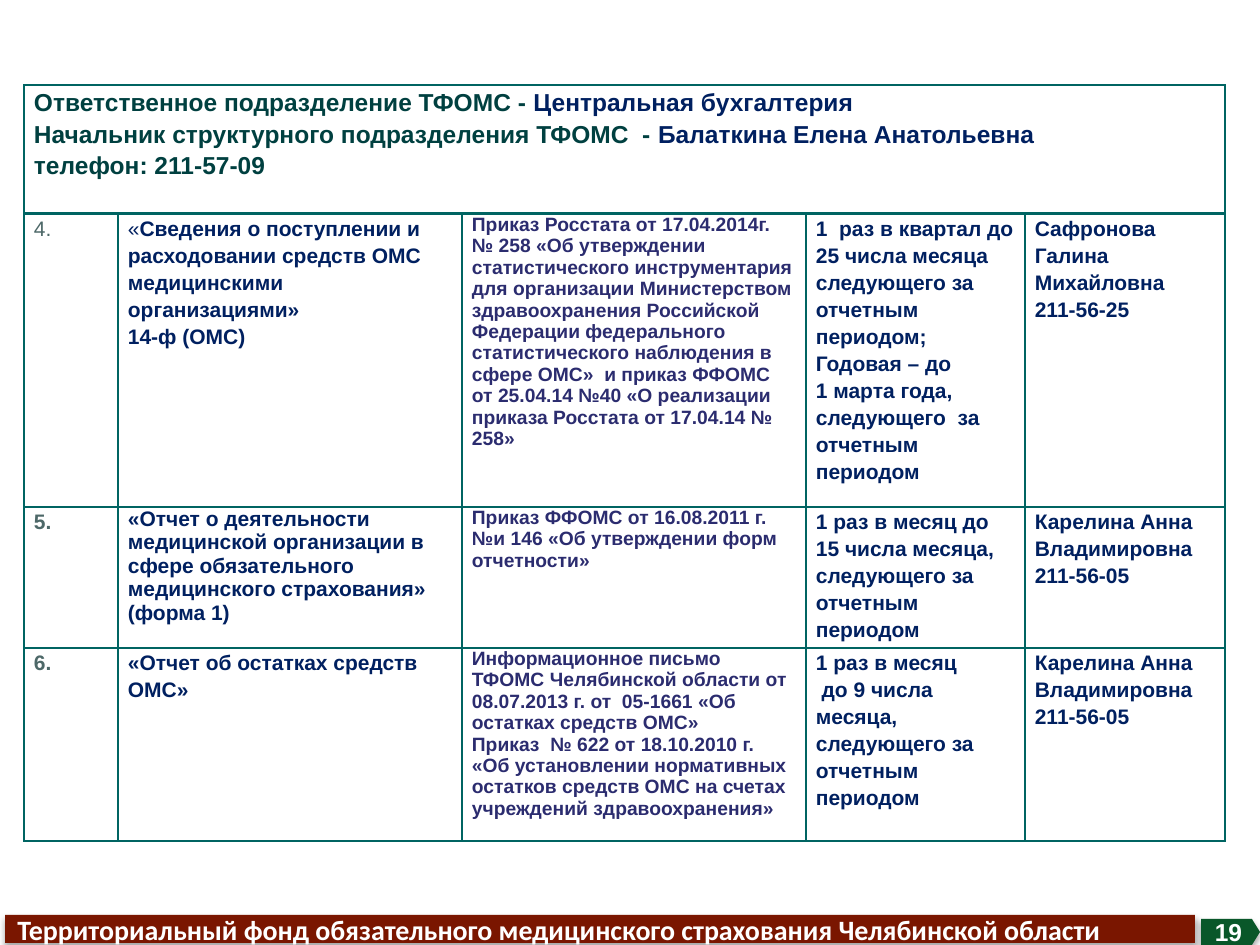
from lxml import etree
from pptx import Presentation
from pptx.dml.color import RGBColor
from pptx.enum.shapes import MSO_SHAPE
from pptx.enum.text import MSO_ANCHOR, PP_ALIGN
from pptx.oxml import parse_xml
from pptx.oxml.ns import nsdecls
from pptx.util import Pt

SCALE = 914400 / 126  # EMU per px
TEAL, NAVY, VIOLET, GREY, LINE = "004040", "002060", "2B2C6F", "4D6868", "006462"


def px(n):
    return round(n * SCALE)


def add_run(p, text, size, color, bold=True, font="Arial"):
    r = p.add_run()
    r.text = text
    r.font.size, r.font.bold, r.font.name = Pt(size), bold, font
    r.font.color.rgb = RGBColor.from_string(color)


prs = Presentation()
prs.slide_width, prs.slide_height = px(1260), px(945)
s = prs.slides.add_slide(prs.slide_layouts[6])

# Table content: each cell is a list of paragraphs
header = [
    [("Ответственное подразделение ТФОМС - ", TEAL), ("Центральная бухгалтерия", NAVY)],
    [("Начальник структурного подразделения ТФОМС  - ", TEAL),
     ("Балаткина Елена Анатольевна", NAVY)],
    [("телефон: 211-57-09", TEAL)],
]
accountant = ["Карелина Анна Владимировна", "211-56-05"]
reports = [
    [["4."],
     ["«Сведения о поступлении и расходовании средств ОМС медицинскими организациями»",
      "14-ф (ОМС)"],
     ["Приказ Росстата от 17.04.2014г. № 258 «Об утверждении статистического "
      "инструментария для организации Министерством здравоохранения Российской "
      "Федерации федерального статистического наблюдения в сфере ОМС»  и приказ ФФОМС "
      "от 25.04.14 №40 «О реализации приказа Росстата от 17.04.14 № 258»"],
     ["1  раз в квартал до 25 числа месяца следующего за отчетным периодом;",
      "Годовая – до", "1 марта года, следующего  за отчетным периодом"],
     ["Сафронова", "Галина", "Михайловна", "211-56-25"]],
    [["5."],
     ["«Отчет о деятельности медицинской организации в сфере обязательного "
      "медицинского страхования»  (форма 1)"],
     ["Приказ ФФОМС от 16.08.2011 г. №и 146 «Об утверждении форм отчетности»"],
     ["1 раз в месяц до 15 числа месяца, следующего за отчетным периодом"],
     accountant],
    [["6."],
     ["«Отчет об остатках средств ОМС»"],
     ["Информационное письмо ТФОМС Челябинской области от 08.07.2013 г. от  05-1661 "
      "«Об остатках средств ОМС»",
      "Приказ  № 622 от 18.10.2010 г. «Об установлении нормативных остатков средств "
      "ОМС на счетах учреждений здравоохранения»"],
     ["1 раз в месяц", " до 9 числа месяца, следующего за отчетным периодом"],
     accountant],
]
col_widths = [94, 344, 344, 219, 200]
row_heights = [129, 293, 141, 193]
col_styles = [(12, GREY, 1.15), (12, NAVY, 1.15), (11, VIOLET, 1),
              (12, NAVY, 1.15), (12, NAVY, 1.15)]

# Table grid
tbl = s.shapes.add_table(4, 5, px(24), px(85), px(sum(col_widths)),
                         px(sum(row_heights))).table
tbl.first_row = tbl.horz_banding = False
for col, width in zip(tbl.columns, col_widths):
    col.width = px(width)
for row, height in zip(tbl.rows, row_heights):
    row.height = px(height)
tbl.cell(0, 0).merge(tbl.cell(0, 4))

# Cell margins, borders and fill
for i, row in enumerate(tbl.rows):
    for cell in row.cells:
        cell.margin_left = cell.margin_right = px(10)
        cell.margin_top = cell.margin_bottom = 0
        tcPr = cell._tc.get_or_add_tcPr()
        for side in "LRTB":
            thick = (i, side) in [(0, "B"), (1, "T")]
            tcPr.append(parse_xml(
                f'<a:ln{side} {nsdecls("a")} w="{Pt(2 if thick else 1)}"><a:solidFill>'
                f'<a:srgbClr val="{LINE}"/></a:solidFill></a:ln{side}>'))
        cell.fill.background()

# Header row
tf = tbl.cell(0, 0).text_frame
for k, runs in enumerate(header):
    p = tf.add_paragraph() if k else tf.paragraphs[0]
    p.line_spacing = 1.15
    for text, color in runs:
        add_run(p, text, 14, color)

# Report rows
for i, report in enumerate(reports, 1):
    for j, (paragraphs, (size, color, spacing)) in enumerate(zip(report, col_styles)):
        tf = tbl.cell(i, j).text_frame
        for k, text in enumerate(paragraphs):
            p = tf.add_paragraph() if k else tf.paragraphs[0]
            p.line_spacing = 1 if (i, j) == (2, 1) else spacing
            if (i, j, k) == (1, 1, 0):  # opening quote is not bold
                add_run(p, text[0], size, color, bold=False)
                text = text[1:]
            add_run(p, text, size, color, bold=(i, j) != (1, 0))

# Footer bar and page number
footer = [
    (MSO_SHAPE.RECTANGLE, (5, 915, 1190, 28), "7A1600", PP_ALIGN.LEFT, 16, "Calibri",
     "Территориальный фонд обязательного медицинского страхования Челябинской области"),
    (MSO_SHAPE.PENTAGON, (1201, 919, 59, 26), "095729", PP_ALIGN.CENTER, 14, "Arial", "19"),
]
for kind, box, fill, align, size, font, text in footer:
    sp = s.shapes.add_shape(kind, *map(px, box))
    if kind == MSO_SHAPE.PENTAGON:
        sp.adjustments[0] = 0.31
    sp.fill.solid()
    sp.fill.fore_color.rgb = RGBColor.from_string(fill)
    sp.line.fill.background()
    sp.shadow.inherit = False
    effects = sp._element.spPr.find("{*}effectLst")
    effects.append(etree.fromstring(
        f'<a:outerShdw {nsdecls("a")} blurRad="{Pt(3.5)}" dist="{Pt(2.2)}" dir="5400000" '
        'rotWithShape="0"><a:srgbClr val="000000"><a:alpha val="32000"/></a:srgbClr>'
        '</a:outerShdw>'))
    tf = sp.text_frame
    tf.word_wrap = True
    tf.vertical_anchor = MSO_ANCHOR.MIDDLE
    p = tf.paragraphs[0]
    p.alignment = align
    add_run(p, text, size, "FFFFFF", font=font)

prs.save("out.pptx")
